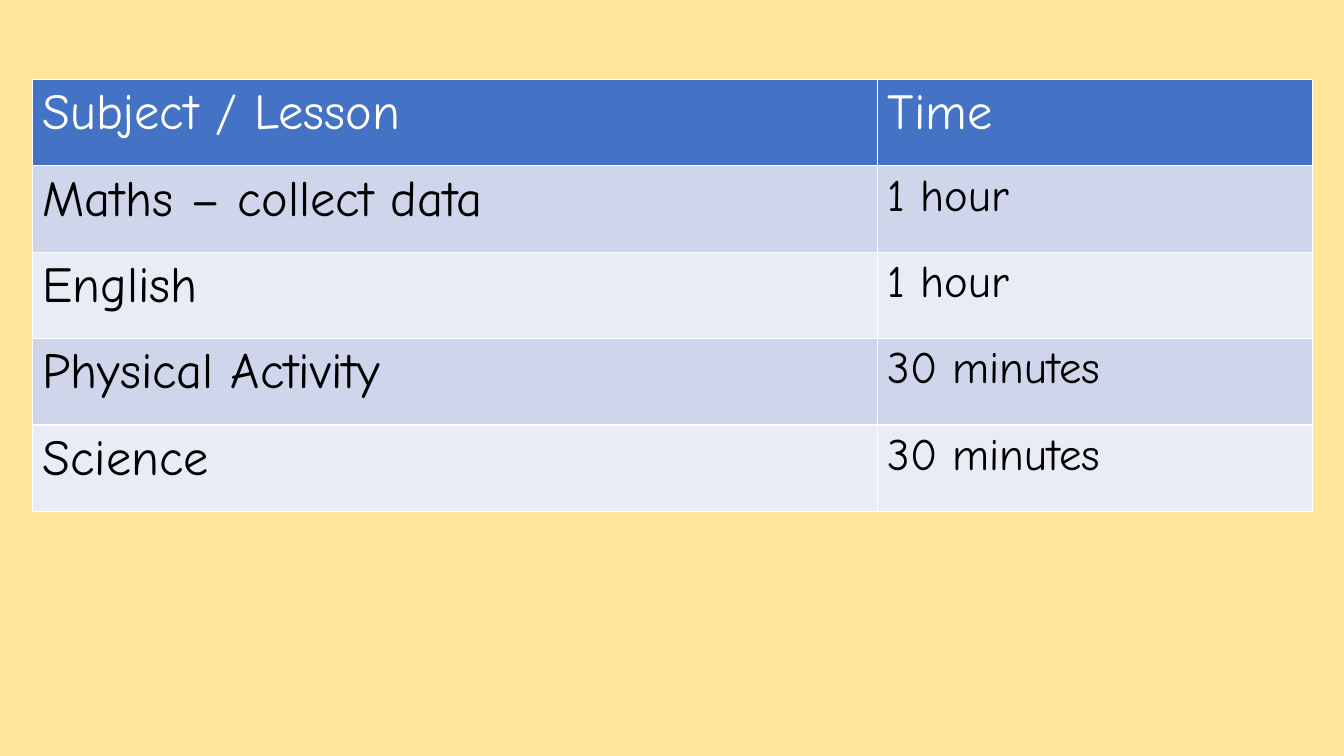
from pptx import Presentation
from pptx.dml.color import RGBColor
from pptx.util import Pt

CREAM = RGBColor(0xFF, 0xE6, 0x99)
BLUE = RGBColor(0x44, 0x72, 0xC4)
BAND_DARK = RGBColor(0xCF, 0xD5, 0xEA)
BAND_LIGHT = RGBColor(0xE9, 0xEB, 0xF5)
WHITE = RGBColor(0xFF, 0xFF, 0xFF)
BLACK = RGBColor(0x00, 0x00, 0x00)

TIMETABLE = [
    ("Subject / Lesson", "Time"),
    ("Maths – collect data", "1 hour"),
    ("English", "1 hour"),
    ("Physical Activity", "30 minutes"),
    ("Science", "30 minutes"),
]


class TimetableSlide:
    """Holds the font and the current slide, and adds styled elements to it."""

    def __init__(self, presentation, font_name):
        self.font_name = font_name
        self.slide = presentation.slides.add_slide(presentation.slide_layouts[6])

    def background(self, color):
        fill = self.slide.background.fill
        fill.solid()
        fill.fore_color.rgb = color

    def cell(self, cell, text, size, color, fill_color):
        cell.fill.solid()
        cell.fill.fore_color.rgb = fill_color
        run = cell.text_frame.paragraphs[0].add_run()
        run.text = text
        run.font.name = self.font_name
        run.font.size = Pt(size)
        run.font.bold = False
        run.font.color.rgb = color

    def table(self, rows, left, top, column_widths, row_height):
        shape = self.slide.shapes.add_table(
            len(rows), len(column_widths), Pt(left), Pt(top),
            Pt(sum(column_widths)), Pt(row_height * len(rows)))
        table = shape.table
        for column, width in zip(table.columns, column_widths):
            column.width = Pt(width)
        for row_index, texts in enumerate(rows):
            header = row_index == 0
            band = BAND_DARK if row_index % 2 else BAND_LIGHT
            for column_index, text in enumerate(texts):
                size = 36 if header or column_index == 0 else 32
                self.cell(table.cell(row_index, column_index), text, size,
                          WHITE if header else BLACK, BLUE if header else band)


def main():
    presentation = Presentation()
    presentation.slide_width = Pt(960)
    presentation.slide_height = Pt(540)
    timetable = TimetableSlide(presentation, "Comic Neue")
    timetable.background(CREAM)
    timetable.table(TIMETABLE, 23.2, 56.8, (603.8, 310.4), 61.7)
    presentation.save("out.pptx")


if __name__ == "__main__":
    main()
